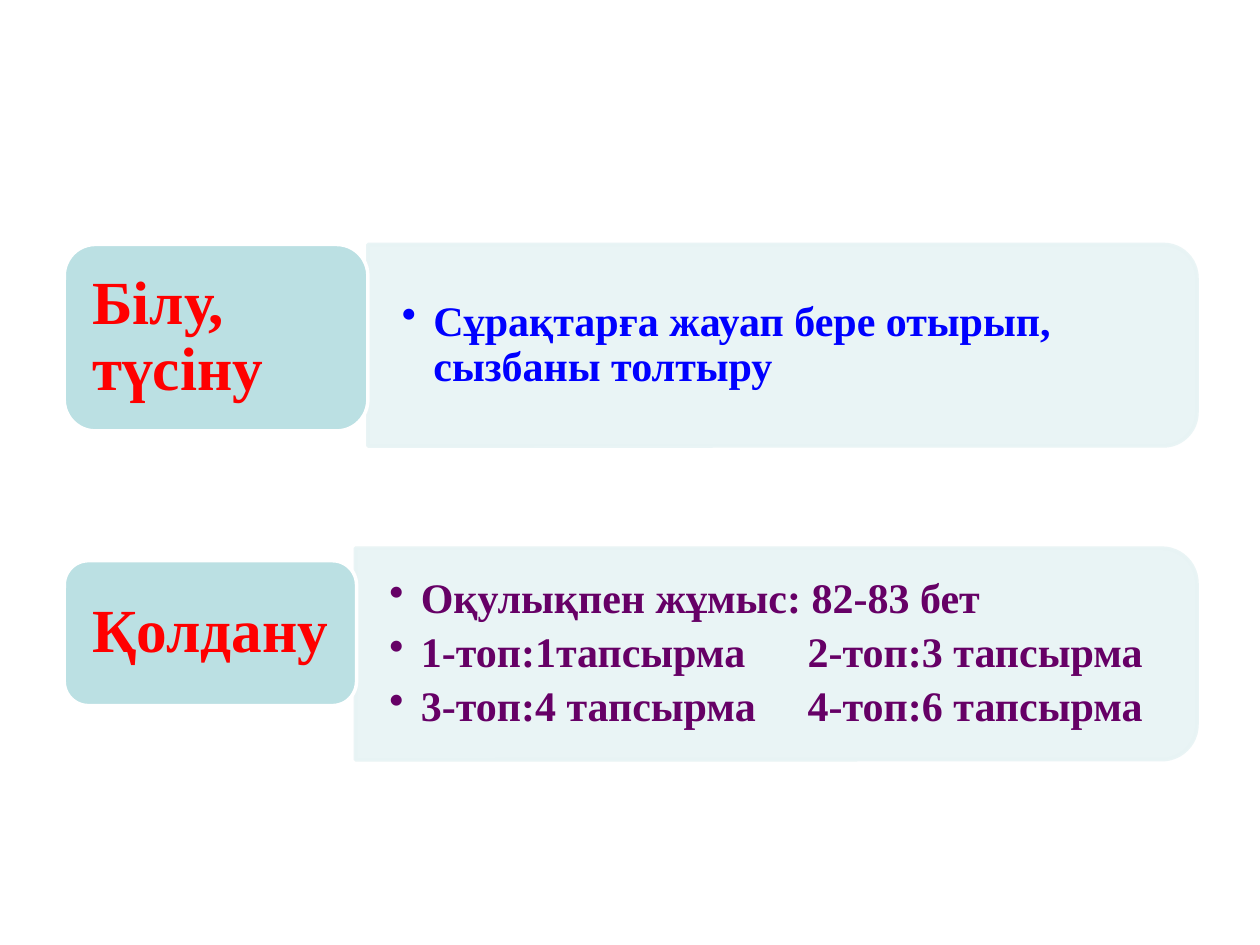
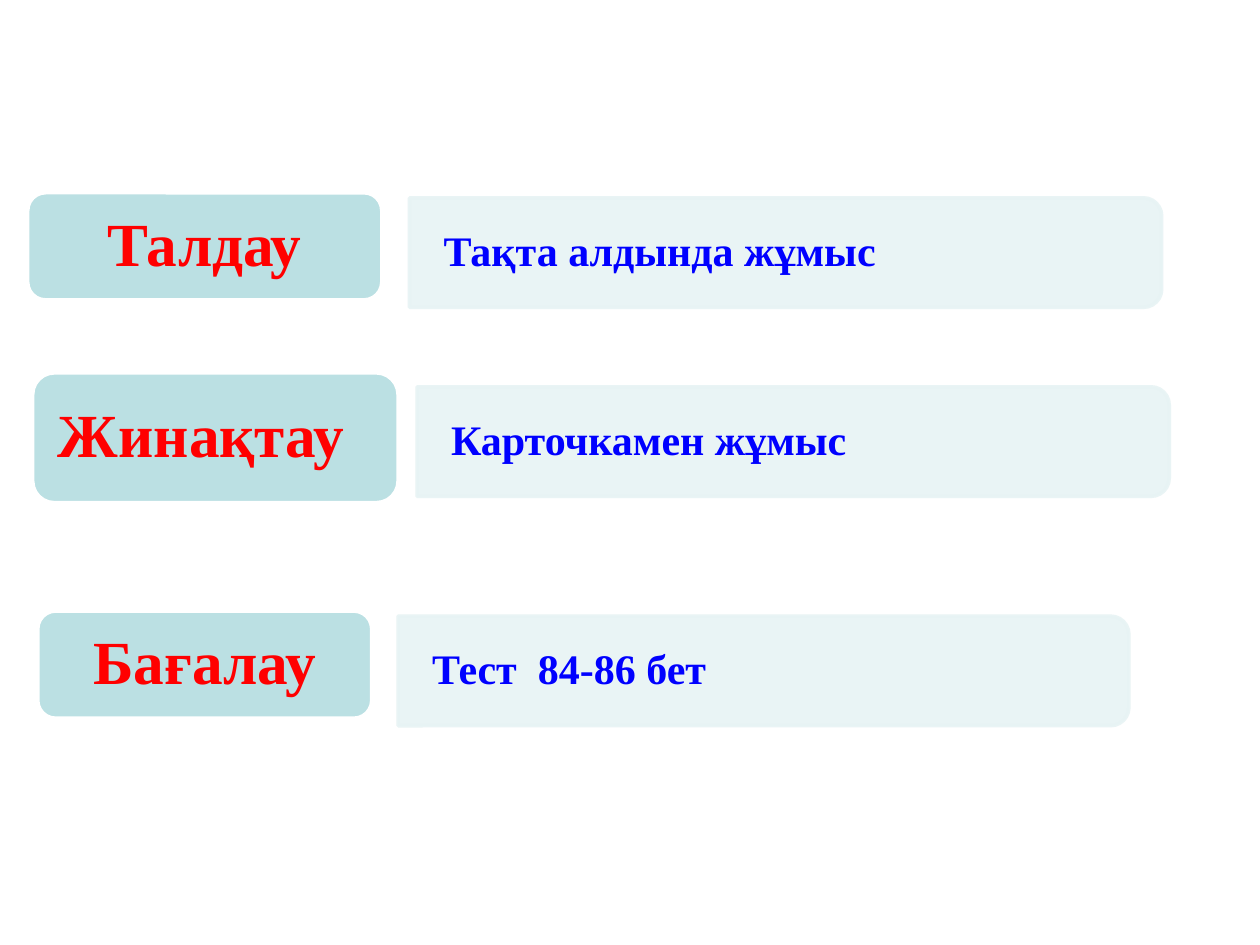
from lxml import etree
from pptx import Presentation
from pptx import util as u
from pptx.dml.color import RGBColor
from pptx.enum import shapes, text
from pptx.oxml.ns import qn

MID = text.MSO_ANCHOR.MIDDLE
LEFT, MIDDLE = text.PP_ALIGN.LEFT, text.PP_ALIGN.CENTER
RED, BLUE, PLUM = "FF0000", "0000FF", "660066"
TAG, PANEL, WHITE = "BBE0E3", "E7F3F4", "FFFFFF"
INSET = 0.05

SLIDES = [
    [
        dict(tag=(0.51, 1.94, 2.41, 1.48), name="Білу, түсіну", align=LEFT,
             panel=(2.92, 1.94, 6.58, 1.6), ink=BLUE, bullet=True,
             lines=["Сұрақтарға жауап бере отырып, сызбаны толтыру"]),
        dict(tag=(0.51, 4.45, 2.32, 1.15), name="Қолдану", align=MIDDLE,
             panel=(2.82, 4.35, 6.68, 1.68), ink=PLUM, bullet=True,
             lines=["Оқулықпен жұмыс: 82-83 бет",
                    "1-топ:1тапсырма\t2-топ:3 тапсырма",
                    "3-топ:4 тапсырма\t4-топ:6 тапсырма"]),
    ],
    [
        dict(tag=(0.22, 1.53, 2.81, 0.85), name="Талдау", align=MIDDLE,
             panel=(3.25, 1.57, 5.97, 0.87), ink=BLUE, bullet=False,
             lines=["Тақта алдында жұмыс"]),
        dict(tag=(0.26, 2.96, 2.9, 1.03), name="Жинақтау", align=LEFT,
             panel=(3.31, 3.07, 5.97, 0.87), ink=BLUE, bullet=False,
             lines=["Карточкамен жұмыс"]),
        dict(tag=(0.3, 4.85, 2.65, 0.85), name="Бағалау", align=MIDDLE,
             panel=(3.16, 4.89, 5.8, 0.87), ink=BLUE, bullet=False,
             lines=["Тест  84-86 бет"]),
    ],
]


def paint(shape, fill, line, alpha=None):
    shape.shadow.inherit = False
    shape.fill.solid()
    shape.fill.fore_color.rgb = RGBColor.from_string(fill)
    shape.line.color.rgb = RGBColor.from_string(line)
    shape.line.width = u.Pt(2)
    if alpha:
        for tint in shape._element.spPr.iter(qn("a:srgbClr")):
            etree.SubElement(tint, qn("a:alpha"), val=str(alpha * 1000))


def write(frame, lines, size, ink, pad, align=LEFT, bullet=False):
    side, edge = map(u.Inches, pad)
    look = dict(word_wrap=True, vertical_anchor=MID, margin_left=side,
                margin_right=side, margin_top=edge, margin_bottom=edge)
    for key, value in look.items():
        setattr(frame, key, value)
    for i, line in enumerate(lines):
        para = frame.add_paragraph() if i else frame.paragraphs[0]
        para.text = line
        para.alignment = align
        para.line_spacing = 0.9
        if i < len(lines) - 1:
            para.space_after = u.Pt(5)
        if bullet:
            props = para._p.get_or_add_pPr()
            props.set("marL", str(u.Inches(0.25)))
            props.set("indent", str(-u.Inches(0.25)))
            etree.SubElement(props, qn("a:buChar"), char="•")
            if "\t" in line:
                tabs = etree.SubElement(props, qn("a:tabLst"))
                etree.SubElement(tabs, qn("a:tab"), pos=str(u.Inches(3.32)), algn="l")
        for key, value in dict(name="Times New Roman", size=u.Pt(size), bold=True).items():
            setattr(para.font, key, value)
        para.font.color.rgb = RGBColor.from_string(ink)


deck = Presentation()
deck.slide_width, deck.slide_height = u.Inches(10), u.Inches(7.5)

for rows in SLIDES:
    slide = deck.slides.add_slide(deck.slide_layouts[6])
    for row in rows:
        x, y, w, h = row["panel"]
        turned = (x + (w - h) / 2, y + (h - w) / 2, h, w)
        panel = slide.shapes.add_shape(
            shapes.MSO_SHAPE.ROUND_2_SAME_RECTANGLE, *map(u.Inches, turned))
        panel.rotation = 90
        paint(panel, PANEL, PANEL, 90)

        gap = INSET * h
        inner = (x, y + gap, w - gap, h - 2 * gap)
        box = slide.shapes.add_textbox(*map(u.Inches, inner))
        write(box.text_frame, row["lines"], 24, row["ink"], (0.27, 0.14),
              bullet=row["bullet"])

        tag = slide.shapes.add_shape(
            shapes.MSO_SHAPE.ROUNDED_RECTANGLE, *map(u.Inches, row["tag"]))
        paint(tag, TAG, WHITE)
        write(tag.text_frame, [row["name"]], 35, RED, (0.15, 0.07), row["align"])

deck.save("out.pptx")
